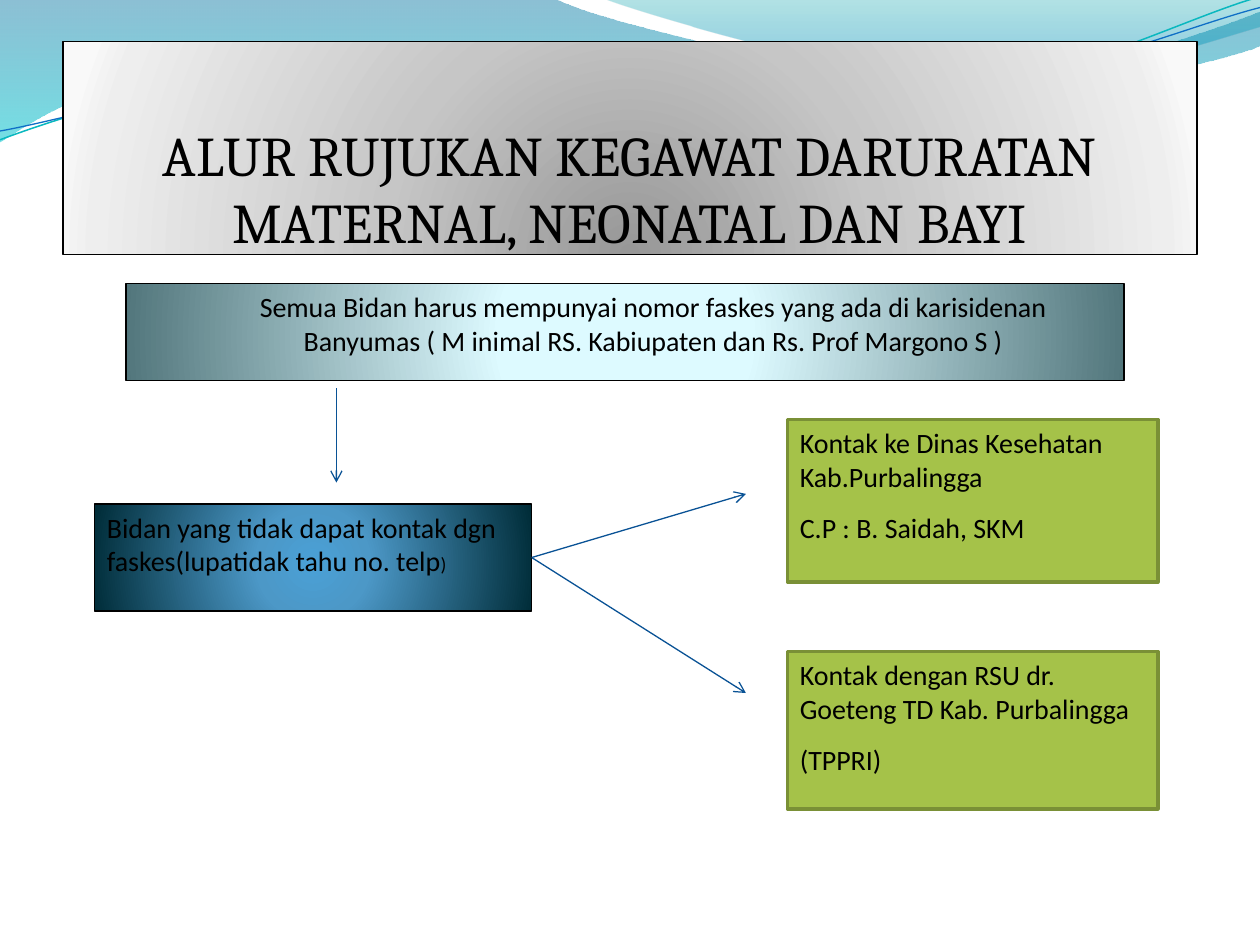
from dataclasses import dataclass

from lxml import etree
from pptx import Presentation
from pptx.dml.color import RGBColor
from pptx.enum.shapes import MSO_CONNECTOR, MSO_SHAPE
from pptx.enum.text import MSO_ANCHOR, PP_ALIGN
from pptx.oxml import parse_xml
from pptx.oxml.ns import nsdecls, qn
from pptx.util import Inches, Pt

RECT = MSO_SHAPE.RECTANGLE
LINE = MSO_CONNECTOR.STRAIGHT
LEFT, CENTER = PP_ALIGN.LEFT, PP_ALIGN.CENTER
TOP, BOTTOM = MSO_ANCHOR.TOP, MSO_ANCHOR.BOTTOM
RIGHT_SIDE = 3


@dataclass(frozen=True)
class Theme:
    """Colours, gradients, fonts and sizes of the slide."""
    ink: str = "000000"
    arrow: str = "095295"
    green: str = "A5C249"
    edge: str = "7A9036"
    teal: str = "0AB8BF"
    blue: str = "0F6FC6"
    wide: tuple = ((0, "0074A1", 45), (100, "00C6CF", 55))
    crest: tuple = ((0, "00A1A9", 30), (80, "008BBF", 45))
    grey: tuple = ((0, "979797", 100), (43, "C6C6C6", 100),
                   (93, "EEEEEE", 100), (100, "F9F9F9", 100))
    pale: tuple = ((0, "DEFBFF", 100), (25, "DDFAFF", 100), (100, "52767C", 100))
    deep: tuple = ((0, "4AA0D6", 100), (25, "4C98C7", 100), (100, "002C38", 100))
    head: str = "Cambria"
    body: str = "Calibri"
    big: int = 32
    mid: int = 16
    small: int = 11
    thin: float = 0.75
    thick: float = 2


class Board:
    """Draws styled elements on one slide."""

    def __init__(self, slide, theme):
        self.shapes = slide.shapes
        self.theme = theme

    def stroke(self, shape, color, width):
        shape.line.color.rgb = RGBColor.from_string(color)
        shape.line.width = Pt(width)

    def blend(self, shape, stops, focus=None):
        shape.fill.background()
        marks = "".join(
            f'<a:gs pos="{pos * 1000}"><a:srgbClr val="{color}">'
            f'<a:alpha val="{alpha * 1000}"/></a:srgbClr></a:gs>'
            for pos, color, alpha in stops)
        if focus:
            sides = " ".join(f'{s}="{v * 1000}"' for s, v in zip("ltrb", focus))
            way = f'<a:path path="circle"><a:fillToRect {sides}/></a:path>'
        else:
            way = '<a:lin ang="5400000" scaled="1"/>'
        grad = parse_xml(f'<a:gradFill {nsdecls("a")} rotWithShape="1">'
                         f'<a:gsLst>{marks}</a:gsLst>{way}</a:gradFill>')
        props = shape.element.spPr
        props.replace(props.find(qn("a:noFill")), grad)

    def bend(self, shape, parts):
        segments = list(shape.element.spPr.iter(qn("a:lnTo")))
        for segment, part in zip(segments, parts):
            if len(part) == 6:
                segment.tag = qn("a:cubicBezTo")
                for spot, (x, y) in enumerate((part[:2], part[2:4])):
                    point = etree.Element(qn("a:pt"), x=str(Inches(x) - shape.left),
                                          y=str(Inches(y) - shape.top))
                    segment.insert(spot, point)

    def curve(self, start, parts, stops=None, color=None, width=0):
        pen = self.shapes.build_freeform(*map(Inches, start))
        pen.add_line_segments([tuple(map(Inches, part[-2:])) for part in parts],
                              close=bool(stops))
        shape = pen.convert_to_shape()
        self.bend(shape, parts)
        shape.shadow.inherit = False
        if stops:
            self.blend(shape, stops)
            shape.line.fill.background()
        else:
            shape.fill.background()
            self.stroke(shape, color, width)

    def box(self, place, color, width, fill=None, stops=None, focus=None):
        shape = self.shapes.add_shape(RECT, *map(Inches, place))
        shape.shadow.inherit = False
        self.stroke(shape, color, width)
        if stops:
            self.blend(shape, stops, focus)
        else:
            shape.fill.solid()
            shape.fill.fore_color.rgb = RGBColor.from_string(fill)
        return shape

    def text(self, shape, words, size, font, align=LEFT, anchor=TOP,
             inset=(0.1, 0.05, 0.1, 0.05), after=10):
        frame = shape.text_frame
        frame.word_wrap = True
        frame.vertical_anchor = anchor
        (frame.margin_left, frame.margin_top,
         frame.margin_right, frame.margin_bottom) = map(Inches, inset)
        frame.text = words
        for para in frame.paragraphs:
            para.alignment = align
            para.space_after = Pt(after)
            for run in para.runs:
                self.style(run, size, font)

    def style(self, run, size, font):
        run.font.size = Pt(size)
        run.font.name = font
        run.font.color.rgb = RGBColor.from_string(self.theme.ink)

    def arrow(self, start, end, source=None):
        link = self.shapes.add_connector(LINE, *map(Inches, start + end))
        if source:
            link.begin_connect(source, RIGHT_SIDE)
        self.stroke(link, self.theme.arrow, self.theme.thin)
        props = link.element.spPr
        etree.SubElement(props.find(qn("a:ln")), qn("a:tailEnd"), type="arrow")
        etree.SubElement(props, qn("a:effectLst"))


def main():
    deck = Presentation()
    deck.slide_width, deck.slide_height = Inches(10), Inches(7.5)
    look = Theme()
    board = Board(deck.slides.add_slide(deck.slide_layouts[6]), look)

    board.curve((-0.01, -0.01), [
        (4.4, -0.01), (4.76, 0.17, 6.64, 0.63, 7.58, 0.63),
        (8.53, 0.63, 9.58, 0.26, 10, 0.09), (10.01, 0.36),
        (9.83, 0.44, 8.7, 0.76, 7.46, 0.75), (6.22, 0.75, 3.82, 0.28, 2.57, 0.34),
        (1.29, 0.36, 0.46, 0.83, -0.01, 1.13)], stops=look.wide)
    board.curve((4.79, -0.01), [
        (5.09, 0.11, 6.82, 0.62, 7.69, 0.65),
        (8.56, 0.69, 9.61, 0.32, 10, 0.21), (10, 0)], stops=look.crest)
    board.curve((0, 1.11), [
        (0.48, 0.93, 1.58, 0.57, 2.77, 0.52), (3.95, 0.47, 5.93, 0.89, 7.13, 0.8),
        (8.33, 0.71, 9.38, 0.15, 9.98, -0.02)], color=look.teal, width=0.85)
    board.curve((0, 1.04), [
        (0.47, 0.96, 1.64, 0.61, 2.83, 0.56), (4.03, 0.51, 5.97, 0.84, 7.17, 0.75),
        (8.36, 0.67, 9.41, 0.21, 10, 0.06)], color=look.blue, width=look.thin)

    title = board.box((0.5, 0.33, 9, 1.69), look.ink, look.thin,
                      stops=look.grey, focus=(50, 130, 50, -30))
    board.text(title, "ALUR RUJUKAN KEGAWAT DARURATAN MATERNAL, NEONATAL DAN BAYI",
               look.big, look.head, CENTER, BOTTOM, (0, 0.05, 0, 0), 0)

    focus = (10, 110, 10, 100)
    rule = board.box((1, 2.25, 7.92, 0.77), look.ink, look.thin,
                     stops=look.pale, focus=focus)
    board.text(rule, "Semua Bidan harus mempunyai nomor faskes yang ada di karisidenan "
               "Banyumas ( M inimal RS. Kabiupaten dan Rs. Prof Margono S )",
               look.mid, look.body, CENTER, inset=(0.6, 0.05, 0.15, 0.05))

    midwife = board.box((0.75, 4, 3.47, 0.85), look.ink, look.thin,
                        stops=look.deep, focus=focus)
    board.text(midwife, "Bidan yang tidak dapat kontak dgn faskes(lupatidak tahu no. telp",
               look.mid, look.body)
    close = midwife.text_frame.paragraphs[0].add_run()
    close.text = ")"
    board.style(close, look.small, look.body)

    for top, height, words in (
            (3.33, 1.29, "Kontak ke Dinas Kesehatan Kab.Purbalingga\nC.P : B. Saidah, SKM"),
            (5.17, 1.25, "Kontak dengan RSU dr. Goeteng TD Kab. Purbalingga\n(TPPRI)")):
        contact = board.box((6.25, top, 2.94, height), look.edge, look.thick,
                            fill=look.green)
        board.text(contact, words, look.mid, look.body)

    board.arrow((2.67, 3.08), (2.67, 3.83))
    for level in (3.92, 5.5):
        board.arrow((4.22, 4.43), (5.92, level), midwife)

    deck.save("out.pptx")


if __name__ == "__main__":
    main()
